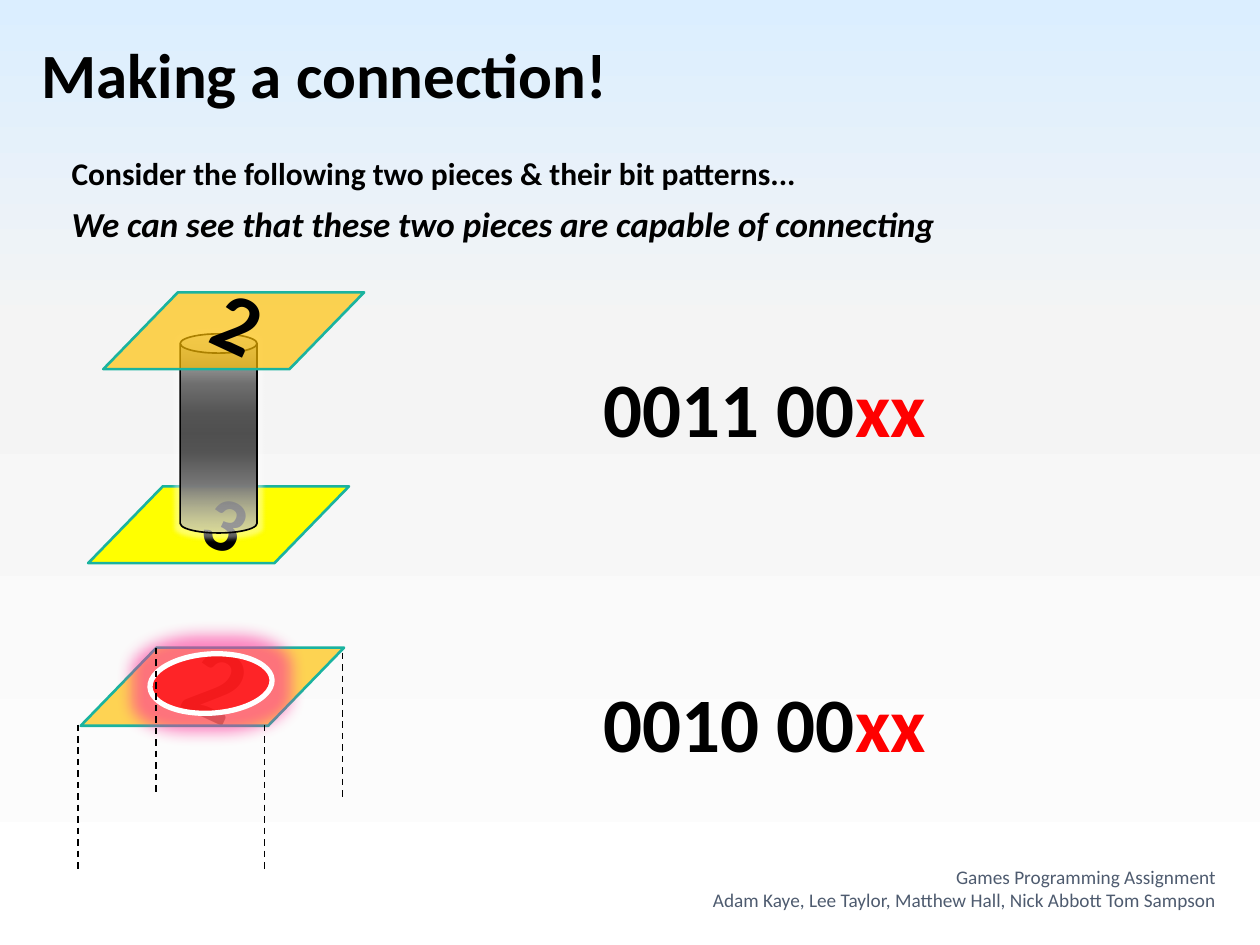
from dataclasses import dataclass

from lxml import etree
from pptx import Presentation
from pptx.dml.color import RGBColor
from pptx.enum.dml import MSO_LINE
from pptx.enum.shapes import MSO_CONNECTOR, MSO_SHAPE
from pptx.enum.text import MSO_ANCHOR, MSO_AUTO_SIZE, PP_ALIGN
from pptx.oxml.ns import qn
from pptx.util import Inches, Pt

PARALLELOGRAM, CAN, OVAL = MSO_SHAPE.PARALLELOGRAM, MSO_SHAPE.CAN, MSO_SHAPE.OVAL
STRAIGHT, DASH = MSO_CONNECTOR.STRAIGHT, MSO_LINE.DASH
GROW, NO_GROW = MSO_AUTO_SIZE.SHAPE_TO_FIT_TEXT, MSO_AUTO_SIZE.NONE
TOP, BOTTOM = MSO_ANCHOR.TOP, MSO_ANCHOR.BOTTOM
LEFT, RIGHT = PP_ALIGN.LEFT, PP_ALIGN.RIGHT

COLOURS = {
    "black": "000000", "white": "FFFFFF", "red": "FF0000", "slate": "4E5B6F",
    "amber": "FFC000", "yellow": "FFFF00", "teal": "1AB39F", "pink": "FF3399",
}
SKY = [(0, "FFFFFF", 100), (65, "F4F4F4", 100), (100, "DBEEFF", 100)]
STEEL = [
    (0, "C0C0C0", 77), (25, "707070", 100), (40, "555555", 100), (50, "505050", 100),
    (60, "555555", 100), (75, "767676", 100), (100, "C0C0C0", 56),
]
DIGIT_TILT = 24.9
TILE_SKEW = 0.971


@dataclass
class Box:
    left: float
    top: float
    width: float
    height: float

    def lengths(self) -> list:
        return [Inches(v) for v in (self.left, self.top, self.width, self.height)]


@dataclass
class Label:
    box: Box
    paragraphs: list  # each paragraph is a list of (text, colour name)
    size: float
    bold: bool = True
    italic: bool = False
    rotation: float = 0
    align: int = LEFT
    anchor: int = TOP
    auto_size: int = GROW


@dataclass
class Solid:
    kind: int
    box: Box
    fill: str = ""
    opacity: int = 100
    line: str = "teal"
    line_width: float = 1.5
    rotation: float = 0


def rgb(name: str) -> RGBColor:
    return RGBColor.from_string(COLOURS[name])


def set_opacity(colour, percent: float) -> None:
    if percent < 100:
        etree.SubElement(colour, qn("a:alpha"), val=str(int(percent * 1000)))


def set_gradient(owner, stops: list, angle: int) -> None:
    """Replace the stops of the owner's gradient; the angle runs clockwise."""
    gradient = owner.xpath(".//a:gradFill")[0]
    stop_list = gradient.find(qn("a:gsLst"))
    for old_stop in list(stop_list):
        stop_list.remove(old_stop)
    for position, colour, opacity in stops:
        stop = etree.SubElement(stop_list, qn("a:gs"), pos=str(position * 1000))
        set_opacity(etree.SubElement(stop, qn("a:srgbClr"), val=colour), opacity)
    gradient.find(qn("a:lin")).set("ang", str(angle * 60000))


def add_glow(shape, colour: str, radius: float, opacity: int) -> None:
    effects = shape.element.spPr.find(qn("a:effectLst"))
    glow = etree.SubElement(effects, qn("a:glow"), rad=str(Pt(radius)))
    set_opacity(etree.SubElement(glow, qn("a:srgbClr"), val=COLOURS[colour]), opacity)


def add_label(shapes, label: Label) -> None:
    holder = shapes.add_textbox(*label.box.lengths())
    holder.rotation = label.rotation
    frame = holder.text_frame
    settings = {"word_wrap": True, "auto_size": label.auto_size,
                "vertical_anchor": label.anchor}
    for name, value in settings.items():
        setattr(frame, name, value)
    style = {"name": "Calibri", "size": Pt(label.size),
             "bold": label.bold, "italic": label.italic}
    for index, pieces in enumerate(label.paragraphs):
        paragraph = frame.add_paragraph() if index else frame.paragraphs[0]
        paragraph.alignment = label.align
        for text, colour in pieces:
            run = paragraph.add_run()
            run.text = text
            for name, value in style.items():
                setattr(run.font, name, value)
            run.font.color.rgb = rgb(colour)


def add_digit(shapes, digit: str, box: Box, size: float) -> None:
    add_label(shapes, Label(box, [[(digit, "black")]], size, rotation=DIGIT_TILT))


def add_solid(shapes, solid: Solid):
    shape = shapes.add_shape(solid.kind, *solid.box.lengths())
    shape.shadow.inherit = False
    shape.rotation = solid.rotation
    shape.line.color.rgb = rgb(solid.line)
    shape.line.width = Pt(solid.line_width)
    if solid.kind == PARALLELOGRAM:
        shape.adjustments[0] = TILE_SKEW
    if solid.fill:
        shape.fill.solid()
        shape.fill.fore_color.rgb = rgb(solid.fill)
        set_opacity(shape.element.spPr.xpath("a:solidFill/a:srgbClr")[0], solid.opacity)
    return shape


def add_dashed_drop(shapes, x: float, top: float, drop: float = 1.15) -> None:
    edge = shapes.add_connector(STRAIGHT, Inches(x), Inches(top), Inches(x), Inches(top + drop))
    edge.line.color.rgb = rgb("black")
    edge.line.width = Pt(0.94)
    edge.line.dash_style = DASH
    etree.SubElement(edge.element.spPr, qn("a:effectLst"))


def add_open_piece(shapes) -> None:
    add_digit(shapes, "2", Box(1.43, 4.84, 0.62, 1.11), 60)
    add_solid(shapes, Solid(PARALLELOGRAM, Box(0.64, 5.14, 2.09, 0.62), "amber", 67))
    hole = add_solid(shapes, Solid(OVAL, Box(1.19, 5.19, 0.97, 0.47), "red", 68,
                                   "white", 3, rotation=356.4))
    add_glow(hole, "pink", 18, 60)
    for x, top in [(1.24, 5.14), (0.62, 5.75), (2.1, 5.75), (2.72, 5.18)]:
        add_dashed_drop(shapes, x, top)


def add_pillar_piece(shapes) -> None:
    add_solid(shapes, Solid(PARALLELOGRAM, Box(0.7, 3.86, 2.07, 0.61), "yellow"))
    add_digit(shapes, "3", Box(1.54, 3.74, 0.61, 0.84), 44)
    pillar = add_solid(shapes, Solid(CAN, Box(1.43, 2.65, 0.61, 1.58),
                                     line="black", line_width=0.94))
    pillar.fill.gradient()
    set_gradient(pillar.element, STEEL, 90)
    add_glow(pillar, "white", 5, 40)
    add_solid(shapes, Solid(PARALLELOGRAM, Box(0.82, 2.32, 2.07, 0.61), "amber", 67))
    add_digit(shapes, "2", Box(1.63, 2.11, 0.61, 0.91), 48)


def add_bit_pattern(shapes, bits: str, top: float) -> None:
    add_label(shapes, Label(Box(4.69, top, 3.67, 0.84),
                            [[(bits, "black"), ("xx", "red")]], 44))


def main() -> None:
    deck = Presentation()
    deck.slide_width, deck.slide_height = Inches(10), Inches(7.5)
    slide = deck.slides.add_slide(deck.slide_layouts[6])
    slide.background.fill.gradient()
    set_gradient(slide.element, SKY, 270)
    shapes = slide.shapes

    add_label(shapes, Label(Box(0.23, 0.23, 6.33, 0.71),
                            [[("Making a connection!", "black")]], 36))
    add_label(shapes, Label(
        Box(0.47, 1.17, 8.36, 0.4),
        [[("Consider the following two pieces & their bit patterns...", "black")]], 18))
    add_bit_pattern(shapes, "0010 00", 5.31)
    add_open_piece(shapes.add_group_shape().shapes)
    add_pillar_piece(shapes.add_group_shape().shapes)
    add_bit_pattern(shapes, "0011 00", 2.81)
    add_label(shapes, Label(
        Box(0.47, 1.56, 8.36, 0.44),
        [[("We can see that these two pieces are capable of connecting", "black")]],
        20, italic=True))
    add_label(shapes, Label(
        Box(3.67, 6.88, 6.08, 0.4),
        [[("Games Programming Assignment", "slate")],
         [("Adam Kaye, Lee Taylor, Matthew Hall, Nick Abbott Tom Sampson", "slate")]],
        11, bold=False, align=RIGHT, anchor=BOTTOM, auto_size=NO_GROW))
    deck.save("out.pptx")


if __name__ == "__main__":
    main()
